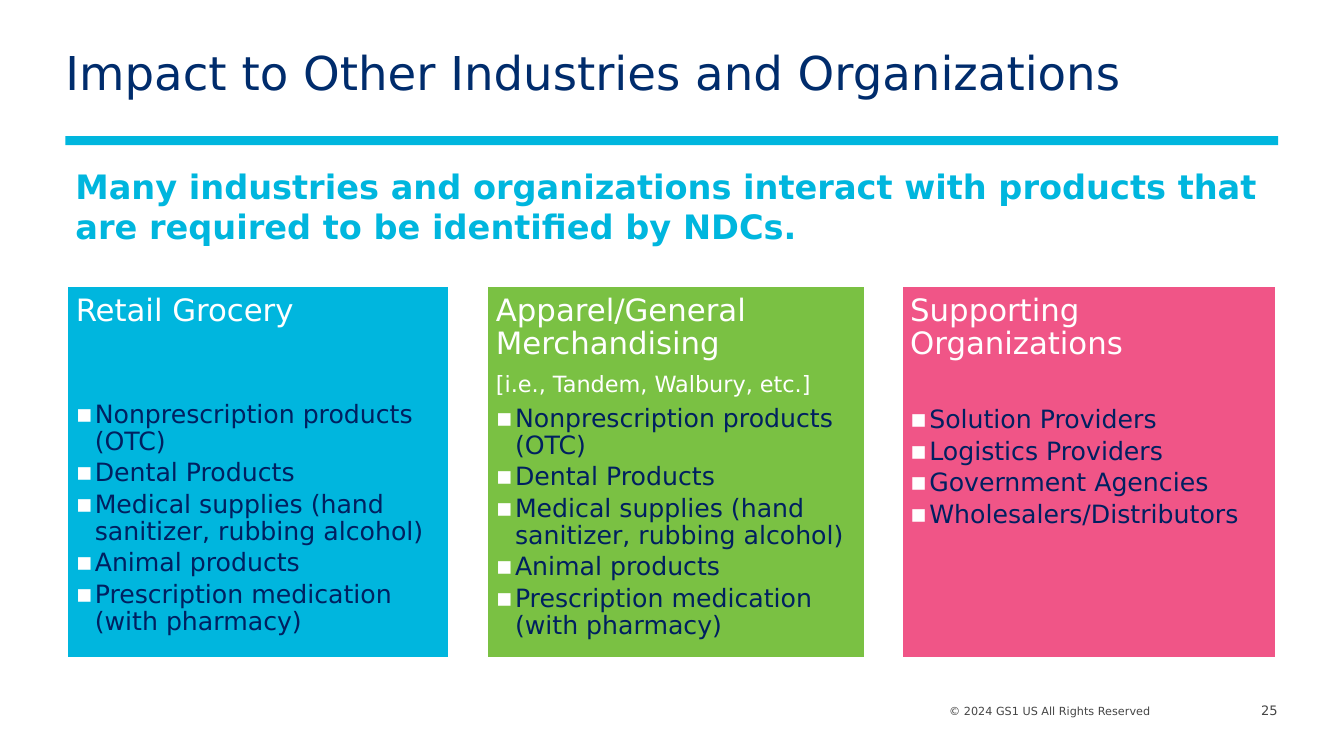
from lxml.etree import SubElement
from pptx import Presentation
from pptx.dml.color import RGBColor
from pptx.enum.shapes import MSO_SHAPE
from pptx.enum.text import MSO_ANCHOR, MSO_AUTO_SIZE, PP_ALIGN
from pptx.oxml.ns import qn
from pptx.util import Cm, Pt

NAVY, DEEP_BLUE, SKY, GREEN, PINK = "002C6C", "002060", "00B6DE", "7AC143", "F05587"
WHITE, GRAY = "FFFFFF", "454545"

PRODUCTS = [
    "Nonprescription products (OTC)",
    "Dental Products",
    "Medical supplies (hand sanitizer, rubbing alcohol)",
    "Animal products",
    "Prescription medication (with pharmacy)",
]
SUPPORTERS = [
    "Solution Providers",
    "Logistics Providers",
    "Government Agencies",
    "Wholesalers/Distributors",
]
PANELS = [
    (1.68, 9.65, SKY, [("Retail Grocery", 22, 52.7)], PRODUCTS),
    (12.27, 9.53, GREEN, [("Apparel/General Merchandising", 22, 8.5),
                          ("[i.e., Tandem, Walbury, etc.]", 16, 6)], PRODUCTS),
    (22.71, 9.45, PINK, [("Supporting Organizations", 22, 33)], SUPPORTERS),
]


def color(value):
    """Turn a hex string into a colour."""
    return RGBColor.from_string(value)


class SlideBuilder:
    """Holds the text style and the current slide."""

    font = "DejaVu Sans"

    def __init__(self, page):
        """Keep the slide to draw on."""
        self.page = page

    def add_paragraph(self, frame, text, size, ink, bold=False, align=PP_ALIGN.LEFT,
                      spacing=1.0, after=0, bullet=None):
        """Add one formatted paragraph to a text frame."""
        para = frame.paragraphs[0]
        if para.runs:
            para = frame.add_paragraph()
        if bullet:
            self.add_bullet(para, bullet)
        para.alignment = align
        para.line_spacing = spacing
        para.space_before = Pt(0)
        para.space_after = Pt(after)
        span = para.add_run()
        span.text = text
        span.font.name = self.font
        span.font.size = Pt(size)
        span.font.bold = bold
        span.font.color.rgb = color(ink)

    def add_bullet(self, para, mark):
        """Give a paragraph a white hanging bullet."""
        properties = para._p.get_or_add_pPr()
        properties.set("marL", str(Cm(0.48)))
        properties.set("indent", str(-Cm(0.48)))
        tint = SubElement(properties, qn("a:buClr"))
        SubElement(tint, qn("a:srgbClr")).set("val", WHITE)
        SubElement(properties, qn("a:buFont")).set("typeface", self.font)
        SubElement(properties, qn("a:buChar")).set("char", mark)

    def prepare(self, frame, anchor, margins):
        """Set wrapping, anchor and margins of a text frame."""
        frame.word_wrap = True
        frame.auto_size = MSO_AUTO_SIZE.NONE
        frame.vertical_anchor = anchor
        (frame.margin_left, frame.margin_top,
         frame.margin_right, frame.margin_bottom) = [Cm(side) for side in margins]
        return frame

    def title(self, text, left, top, width, height):
        """Move and fill the title placeholder."""
        box = self.page.shapes.title
        box.left, box.top, box.width, box.height = map(Cm, (left, top, width, height))
        frame = self.prepare(box.text_frame, MSO_ANCHOR.MIDDLE, (0, 0.13, 0.25, 0.13))
        self.add_paragraph(frame, text, 33.3, NAVY, spacing=0.9)

    def text(self, text, left, top, width, height, anchor=MSO_ANCHOR.TOP,
             margins=(0, 0, 0, 0), **style):
        """Add a text box with one paragraph."""
        box = self.page.shapes.add_textbox(*map(Cm, (left, top, width, height)))
        self.add_paragraph(self.prepare(box.text_frame, anchor, margins), text, **style)

    def rectangle(self, fill, left, top, width, height):
        """Add a plain filled rectangle."""
        box = self.page.shapes.add_shape(
            MSO_SHAPE.RECTANGLE, *map(Cm, (left, top, width, height)))
        box.shadow.inherit = False
        box.fill.solid()
        box.fill.fore_color.rgb = color(fill)
        box.line.fill.background()
        return box

    def panel(self, left, width, fill, headings, items):
        """Add a coloured panel with headings and a bulleted list."""
        box = self.rectangle(fill, left, 7.19, width, 9.4)
        box.line.color.rgb = color(WHITE)
        box.line.width = Pt(2)
        frame = self.prepare(box.text_frame, MSO_ANCHOR.TOP, (0.23,) * 4)
        for text, size, after in headings:
            self.add_paragraph(frame, text, size, WHITE, spacing=0.9, after=after)
        for item in items:
            self.add_paragraph(frame, item, 18, DEEP_BLUE, spacing=0.9, after=3,
                               bullet="▪")


def main():
    """Build the slide and save it."""
    deck = Presentation()
    deck.slide_width, deck.slide_height = Cm(33.87), Cm(19.05)
    builder = SlideBuilder(deck.slides.add_slide(deck.slide_layouts[5]))

    builder.title("Impact to Other Industries and Organizations", 1.65, 0.64, 28.02, 2.51)
    builder.rectangle(SKY, 1.65, 3.43, 30.56, 0.23)
    builder.text("Many industries and organizations interact with products that "
                 "are required to be identified by NDCs.", 1.65, 4.04, 30.53, 2.41,
                 margins=(0.25, 0.13, 0.25, 0.13), size=24, ink=SKY, bold=True)
    for panel in PANELS:
        builder.panel(*panel)
    builder.text("© 2024 GS1 US All Rights Reserved", 20.88, 17.75, 8.12, 0.53,
                 size=8, ink=GRAY, align=PP_ALIGN.RIGHT)
    builder.text("25", 31.29, 17.63, 0.91, 0.56, anchor=MSO_ANCHOR.MIDDLE,
                 size=9.3, ink=GRAY, align=PP_ALIGN.RIGHT)

    deck.save("out.pptx")


if __name__ == "__main__":
    main()
